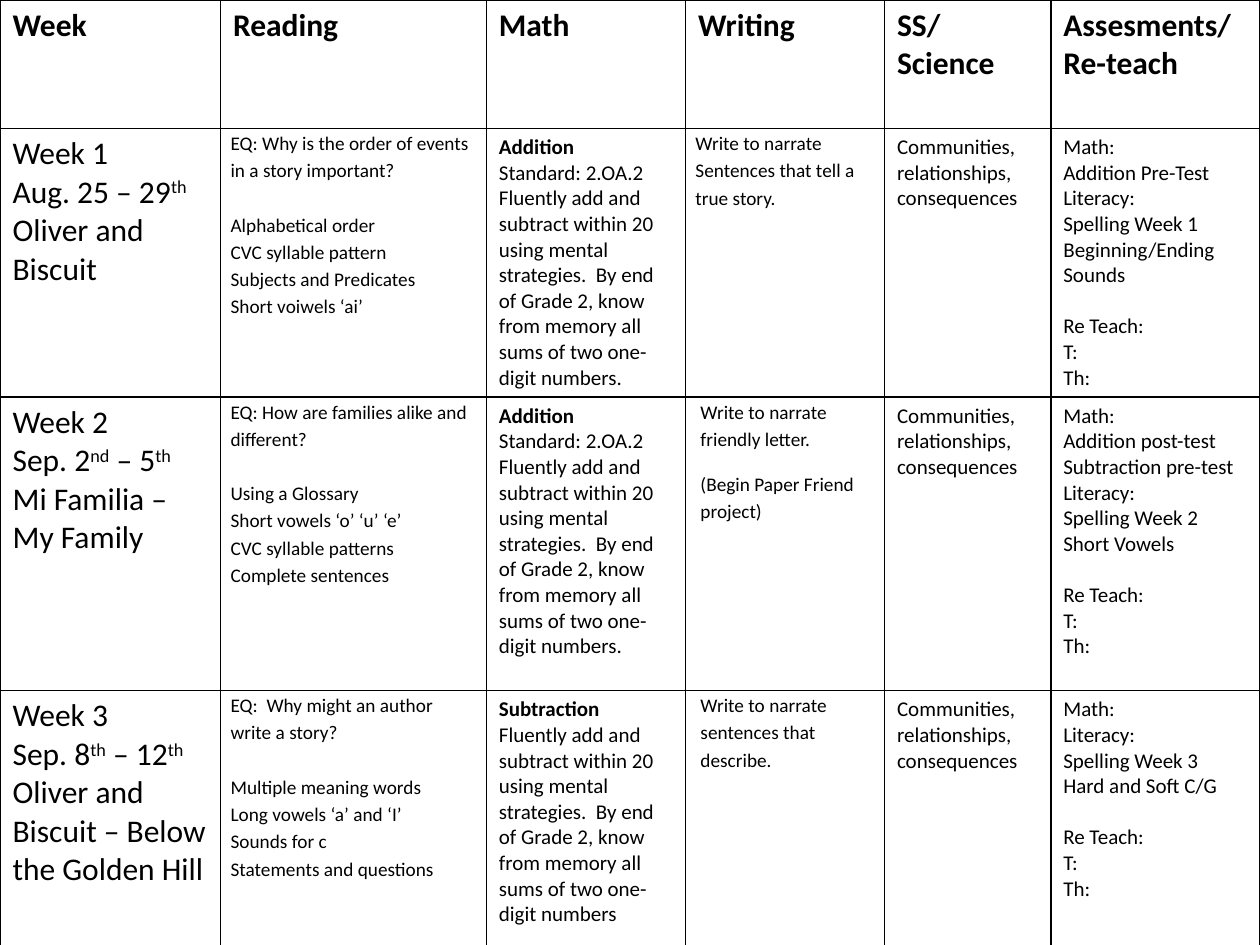
from lxml import etree
from pptx import Presentation
from pptx.dml.color import RGBColor
from pptx.oxml import parse_xml
from pptx.oxml.ns import nsdecls
from pptx.util import Inches, Pt

BLACK = RGBColor(0x00, 0x00, 0x00)
WHITE = RGBColor(0xFF, 0xFF, 0xFF)
FONT = "Calibri"
LINE_FACTOR = 1.22  # natural line height of the font

COLUMN_WIDTHS = [1.75, 2.11, 1.58, 1.58, 1.32, 1.66]
ROW_HEIGHTS = [1.02, 2.13, 2.33, 2.06]
HEADINGS = ["Week", "Reading", "Math", "Writing", "SS/ Science", "Assesments/ Re-teach"]

STANDARD = "Standard: 2.OA.2"
FLUENCY = ("Fluently add and subtract within 20 using mental strategies.  By end of Grade 2, "
           "know from memory all sums of two one-digit numbers")
SOCIAL_STUDIES = "Communities, relationships, consequences"
RE_TEACH = ["Re Teach:", "T:", "Th:"]

# Each cell is a list of line groups, parted by one line; ^ encloses a superscript.
WEEKS = [
    {
        "week": [["Week 1", "Aug. 25 – 29^th^", "Oliver and Biscuit"]],
        "reading": [["EQ: Why is the order of events in a story important?"],
                    ["Alphabetical order", "CVC syllable pattern",
                     "Subjects and Predicates", "Short voiwels ‘ai’"]],
        "math": [["Addition", STANDARD, FLUENCY + "."]],
        "writing": [["Write to narrate", "Sentences that tell a true story."]],
        "writing_layout": {"inset": 0.08},
        "assessments": ["Math:", "Addition Pre-Test", "Literacy:", "Spelling Week 1",
                        "Beginning/Ending Sounds"],
    },
    {
        "week": [["Week 2", "Sep. 2^nd^ – 5^th^", "Mi Familia – My Family"]],
        "reading": [["EQ: How are families alike and different?"],
                    ["Using a Glossary", "Short vowels ‘o’ ‘u’ ‘e’",
                     "CVC syllable patterns", "Complete sentences"]],
        "math": [["Addition", STANDARD, FLUENCY + "."]],
        "writing": [["Write to narrate friendly letter.", "(Begin Paper Friend project)"]],
        "writing_layout": {"inset": 0.12, "space_after": 10},
        "assessments": ["Math:", "Addition post-test", "Subtraction pre-test", "Literacy:",
                        "Spelling Week 2", "Short Vowels"],
    },
    {
        "week": [["Week 3", "Sep. 8^th^ – 12^th^", "Oliver and Biscuit – Below the Golden Hill"]],
        "reading": [["EQ:  Why might an author write a story?"],
                    ["Multiple meaning words", "Long vowels ‘a’ and ‘I’",
                     "Sounds for c", "Statements and questions"]],
        "math": [["Subtraction", FLUENCY]],
        "writing": [["Write to narrate sentences that describe."]],
        "writing_layout": {"inset": 0.12, "space_after": 10},
        "assessments": ["Math:", "Literacy:", "Spelling Week 3", "Hard and Soft C/G"],
    },
]


def style_cell(cell):
    cell.fill.solid()
    cell.fill.fore_color.rgb = WHITE
    properties = cell._tc.get_or_add_tcPr()
    for position, side in enumerate("LRTB"):
        border = parse_xml(f'<a:ln{side} {nsdecls("a")} w="{Pt(1)}"/>')
        fill = etree.SubElement(border, border.tag.replace(f"ln{side}", "solidFill"))
        color = etree.SubElement(fill, border.tag.replace(f"ln{side}", "srgbClr"))
        color.set("val", str(BLACK))
        properties.insert(position, border)


def add_runs(paragraph, line, size, bold):
    for index, part in enumerate(line.split("^")):
        if not part:
            continue
        run = paragraph.add_run()
        run.text = part
        font = run.font
        font.name, font.size, font.bold = FONT, Pt(size), bold
        font.color.rgb = BLACK
        if index % 2:
            run._r.get_or_add_rPr().set("baseline", "30000")


def fill_cell(cell, groups, size, bold=False, bold_first=False, inset=None,
              line_spacing=1.0, space_after=0):
    """Write the groups of lines; a given inset also removes the top and bottom margins."""
    style_cell(cell)
    if inset is not None:
        cell.margin_left = cell.margin_right = Inches(inset)
        cell.margin_top = cell.margin_bottom = 0
    text_frame = cell.text_frame
    first = True
    for group in groups:
        for index, line in enumerate(group):
            paragraph = text_frame.paragraphs[0] if first else text_frame.add_paragraph()
            paragraph.line_spacing = line_spacing
            paragraph.space_after = Pt(space_after)
            if index == 0 and not first:
                paragraph.space_before = Pt(round(size * LINE_FACTOR * line_spacing, 1))
            add_runs(paragraph, line, size, bold or (bold_first and first))
            first = False


def fill_week(cells, week):
    fill_cell(cells[0], week["week"], 18)
    fill_cell(cells[1], week["reading"], 11, inset=0.08, line_spacing=1.15)
    fill_cell(cells[2], week["math"], 12, bold_first=True)
    fill_cell(cells[3], week["writing"], 11, line_spacing=1.15, **week["writing_layout"])
    fill_cell(cells[4], [[SOCIAL_STUDIES]], 12)
    fill_cell(cells[5], [week["assessments"], RE_TEACH], 12)


def add_plan_table(slide, left, top, width, height):
    frame = slide.shapes.add_table(len(WEEKS) + 1, len(HEADINGS), left, top, width, height)
    table = frame.table
    table.first_row = table.horz_banding = False
    for column, column_width in zip(table.columns, COLUMN_WIDTHS):
        column.width = Inches(column_width)
    for row, row_height in zip(table.rows, ROW_HEIGHTS):
        row.height = Inches(row_height)
    for cell, heading in zip(table.rows[0].cells, HEADINGS):
        fill_cell(cell, [[heading]], 18, bold=True)
    for index, week in enumerate(WEEKS, start=1):
        fill_week(list(table.rows[index].cells), week)


def main():
    presentation = Presentation()
    presentation.slide_width = Inches(10)
    presentation.slide_height = Inches(7.5)
    slide = presentation.slides.add_slide(presentation.slide_layouts[6])
    add_plan_table(slide, 0, 0, Inches(10), Inches(7.47))
    presentation.save("out.pptx")


if __name__ == "__main__":
    main()
